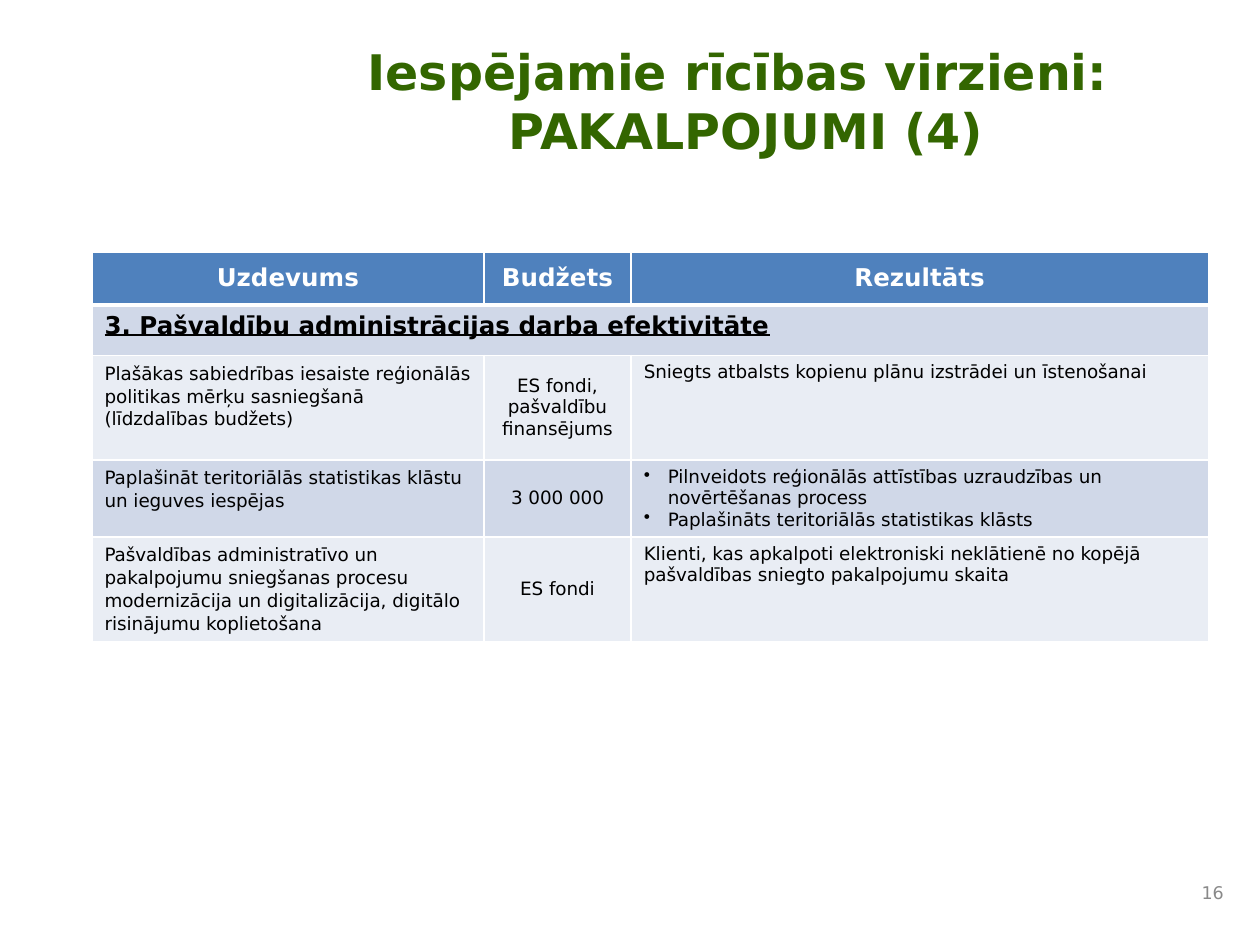
from lxml import etree
from pptx import Presentation
from pptx.dml.color import RGBColor
from pptx.enum.text import MSO_ANCHOR, PP_ALIGN
from pptx.oxml.ns import qn
from pptx.util import Inches, Pt

MIDDLE, TOP = MSO_ANCHOR.MIDDLE, MSO_ANCHOR.TOP
LEFT, CENTER, RIGHT = PP_ALIGN.LEFT, PP_ALIGN.CENTER, PP_ALIGN.RIGHT

FONT = "DejaVu Sans"
WHITE, BLACK, GREEN, GRAY = "FFFFFF", "000000", "336600", "898989"
BLUE, BAND, PALE = "4F81BD", "D0D8E8", "E9EDF4"

TITLE = "Iespējamie rīcības virzieni: \vPAKALPOJUMI (4)"
NUMBER = "16"
HEADS = ["Uzdevums", "Budžets", "Rezultāts"]
GROUP = "3. Pašvaldību administrācijas darba efektivitāte"
TASKS = [
    ("Plašākas sabiedrības iesaiste reģionālās politikas mērķu sasniegšanā (līdzdalības budžets)",
     "ES fondi, pašvaldību finansējums",
     ["Sniegts atbalsts kopienu plānu izstrādei un īstenošanai"]),
    ("Paplašināt teritoriālās statistikas klāstu un ieguves iespējas",
     "3 000 000",
     ["Pilnveidots reģionālās attīstības uzraudzības un novērtēšanas process",
      "Paplašināts teritoriālās statistikas klāsts"]),
    ("Pašvaldības administratīvo un pakalpojumu sniegšanas procesu modernizācija un "
     "digitalizācija, digitālo risinājumu koplietošana",
     "ES fondi",
     ["Klienti, kas apkalpoti elektroniski neklātienē no kopējā pašvaldības sniegto "
      "pakalpojumu skaita"]),
]
COLS = [3.11, 1.17, 4.58]
ROWS = [0.42, 0.4, 0.83, 0.61, 0.83]


def color(code):
    """Turn a hex string into a colour."""
    return RGBColor.from_string(code)


def write(frame, lines, size=10.5, ink=BLACK, bold=False, under=False,
          align=LEFT, space=None, bullet=False):
    """Fill a text frame with formatted paragraphs."""
    frame.word_wrap = True
    for i, line in enumerate(lines):
        para = frame.paragraphs[0] if i == 0 else frame.add_paragraph()
        para.text = line
        para.alignment = align
        if space:
            para.line_spacing = space
        if bullet:
            props = para._p.get_or_add_pPr()
            props.set("marL", str(Inches(0.19)))
            props.set("indent", str(-Inches(0.19)))
            etree.SubElement(props, qn("a:buChar"), char="•")
        for run in para.runs:
            font = run.font
            font.name, font.size = FONT, Pt(size)
            font.bold, font.underline = bold, under
            font.color.rgb = color(ink)


def paint(cell, fill, row):
    """Give a cell its white borders and its fill."""
    props = cell._tc.get_or_add_tcPr()
    thick = {(0, "B"), (1, "T")}
    for side in "LRTB":
        width = 3 if (row, side) in thick else 1
        line = etree.SubElement(props, qn("a:ln" + side), w=str(Pt(width)))
        solid = etree.SubElement(line, qn("a:solidFill"))
        etree.SubElement(solid, qn("a:srgbClr"), val=WHITE)
    cell.fill.solid()
    cell.fill.fore_color.rgb = color(fill)


def label(slide, text, place, **style):
    """Add a text box centred vertically."""
    box = slide.shapes.add_textbox(*map(Inches, place))
    box.text_frame.vertical_anchor = MIDDLE
    write(box.text_frame, [text], **style)


def grid(slide):
    """Add the table of tasks, budgets and results."""
    table = slide.shapes.add_table(
        len(ROWS), len(COLS), Inches(0.73), Inches(2),
        Inches(sum(COLS)), Inches(sum(ROWS))).table
    for col, width in zip(table.columns, COLS):
        col.width = Inches(width)
    for row, height in zip(table.rows, ROWS):
        row.height = Inches(height)
    for r in range(len(ROWS)):
        fill = BLUE if r == 0 else (BAND if r % 2 else PALE)
        for c in range(len(COLS)):
            cell = table.cell(r, c)
            paint(cell, fill, r)
            cell.vertical_anchor = MIDDLE if r == 0 or (c == 1 and r > 1) else TOP
    for c, head in enumerate(HEADS):
        write(table.cell(0, c).text_frame, [head], size=14, ink=WHITE,
              bold=True, align=CENTER)
    table.cell(1, 0).merge(table.cell(1, len(COLS) - 1))
    write(table.cell(1, 0).text_frame, [GROUP], size=14, bold=True, under=True)
    for r, (task, budget, results) in enumerate(TASKS, 2):
        write(table.cell(r, 0).text_frame, [task], space=1.07)
        write(table.cell(r, 1).text_frame, [budget], align=CENTER)
        write(table.cell(r, 2).text_frame, results, bullet=len(results) > 1)


def main():
    """Build and save the slide."""
    deck = Presentation()
    deck.slide_width, deck.slide_height = Inches(10), Inches(7.5)
    slide = deck.slides.add_slide(deck.slide_layouts[6])
    grid(slide)
    label(slide, NUMBER, (9.33, 6.92, 0.48, 0.33), size=10, ink=GRAY, align=RIGHT)
    label(slide, TITLE, (2.41, 0.2, 7.02, 1.2), size=28, ink=GREEN,
          bold=True, align=CENTER)
    deck.save("out.pptx")


if __name__ == "__main__":
    main()
